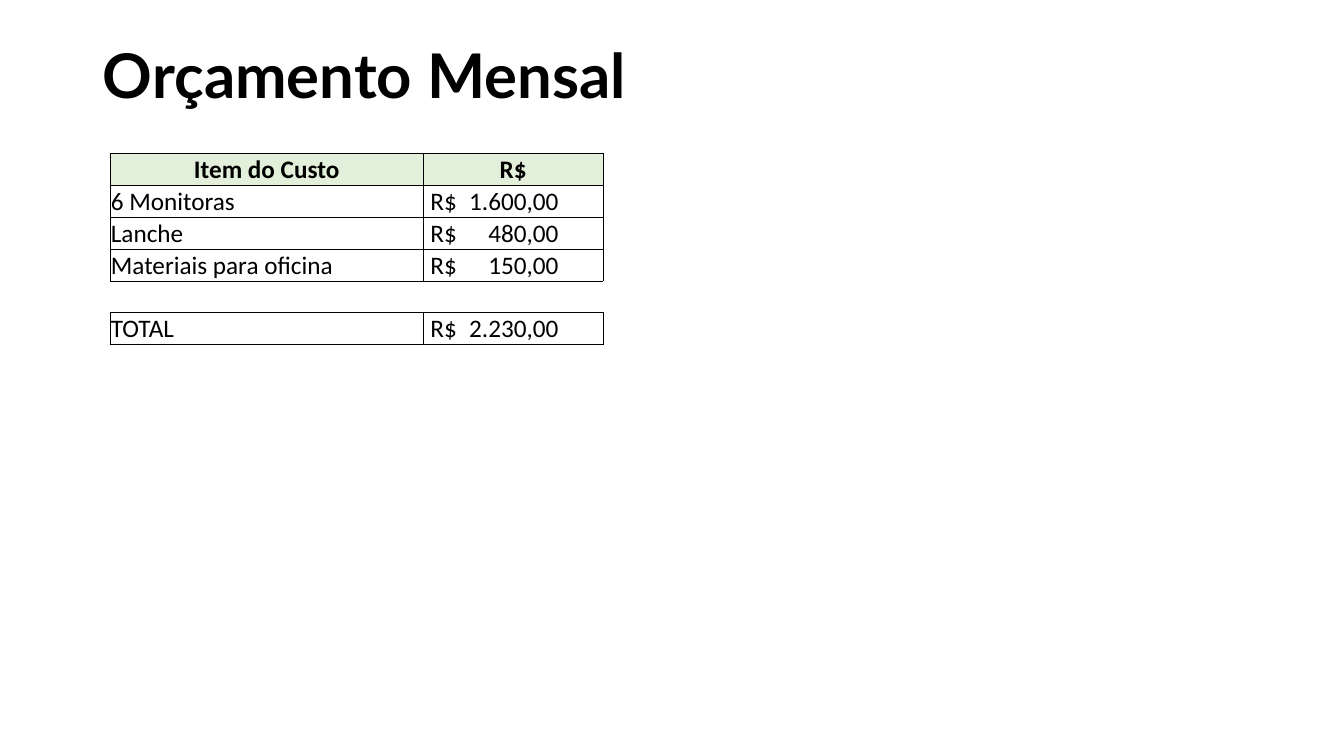
from lxml.etree import SubElement
from pptx import Presentation
from pptx.dml.color import RGBColor
from pptx.enum.text import MSO_ANCHOR, MSO_AUTO_SIZE, PP_ALIGN
from pptx.oxml import parse_xml
from pptx.oxml.ns import nsdecls, qn
from pptx.util import Inches, Pt

TITLE = "Orçamento Mensal"
ROWS = [
    ("Item do Custo", "R$"),
    ("6 Monitoras", "R$\t1.600,00"),
    ("Lanche", "R$\t480,00"),
    ("Materiais para oficina", "R$\t150,00"),
    ("", ""),
    ("TOTAL", "R$\t2.230,00"),
]
COLORS = {"text": "000000", "line": "000000", "header": "E2EFDA"}
FONTS = {
    "title": {"name": "Lato", "size": Pt(44), "bold": True},
    "header": {"name": "Calibri", "size": Pt(18), "bold": True},
    "body": {"name": "Calibri", "size": Pt(18), "bold": False},
}
SLIDE_W, SLIDE_H = 13.33, 7.5
TITLE_BOX = (0.92, 0.4, 11.5, 1.45)
TABLE_LEFT, TABLE_TOP = 1.09, 1.52
COLS = (3.11, 1.78)
TABLE_H = 1.9
AMOUNT_INDENT, AMOUNT_TAB = 0.07, 1.27
CELL_MARGINS = {"margin_left": 0.01, "margin_right": 0.01,
                "margin_top": 0.01, "margin_bottom": 0}


def set_font(font, style):
    for key, value in FONTS[style].items():
        setattr(font, key, value)
    font.color.rgb = RGBColor.from_string(COLORS["text"])


def set_borders(cell, drawn):
    tcPr = cell._tc.get_or_add_tcPr()
    for i, side in enumerate("LRTB"):
        paint = (f'<a:solidFill><a:srgbClr val="{COLORS["line"]}"/></a:solidFill>'
                 if side in drawn else "<a:noFill/>")
        tcPr.insert(i, parse_xml(
            f'<a:ln{side} {nsdecls("a")} w="{Pt(0.5)}">{paint}</a:ln{side}>'))


def add_amount_tab(p):
    tabs = SubElement(p._p.get_or_add_pPr(), qn("a:tabLst"))
    SubElement(tabs, qn("a:tab"), pos=str(Inches(AMOUNT_TAB)), algn="r")


def fill_cell(cell, text, is_header, is_amount):
    for key, value in CELL_MARGINS.items():
        setattr(cell, key, Inches(value))
    cell.vertical_anchor = MSO_ANCHOR.MIDDLE if is_header else MSO_ANCHOR.BOTTOM
    p = cell.text_frame.paragraphs[0]
    if is_header:
        cell.fill.solid()
        cell.fill.fore_color.rgb = RGBColor.from_string(COLORS["header"])
        p.alignment = PP_ALIGN.CENTER
    else:
        cell.fill.background()
        if is_amount and text:
            cell.margin_left = Inches(AMOUNT_INDENT)
            add_amount_tab(p)
    set_borders(cell, "LRTB" if text else "TB")
    if text:
        r = p.add_run()
        r.text = text
        set_font(r.font, "header" if is_header else "body")


def add_title(s):
    title = s.shapes.title
    title.left, title.top, title.width, title.height = map(Inches, TITLE_BOX)
    tf = title.text_frame
    tf.word_wrap = True
    tf.auto_size = MSO_AUTO_SIZE.NONE
    tf.vertical_anchor = MSO_ANCHOR.TOP
    p = tf.paragraphs[0]
    p.alignment = PP_ALIGN.LEFT
    p.line_spacing = 0.9
    r = p.add_run()
    r.text = TITLE
    set_font(r.font, "title")


def add_budget(s):
    table = s.shapes.add_table(
        len(ROWS), len(COLS), Inches(TABLE_LEFT), Inches(TABLE_TOP),
        Inches(sum(COLS)), Inches(TABLE_H)).table
    table.first_row = table.horz_banding = False
    for column, width in zip(table.columns, COLS):
        column.width = Inches(width)
    for i, row in enumerate(ROWS):
        for j, text in enumerate(row):
            fill_cell(table.cell(i, j), text, i == 0, j == 1)


def main():
    prs = Presentation()
    prs.slide_width, prs.slide_height = Inches(SLIDE_W), Inches(SLIDE_H)
    s = prs.slides.add_slide(prs.slide_layouts[5])
    add_title(s)
    add_budget(s)
    prs.save("out.pptx")


if __name__ == "__main__":
    main()
